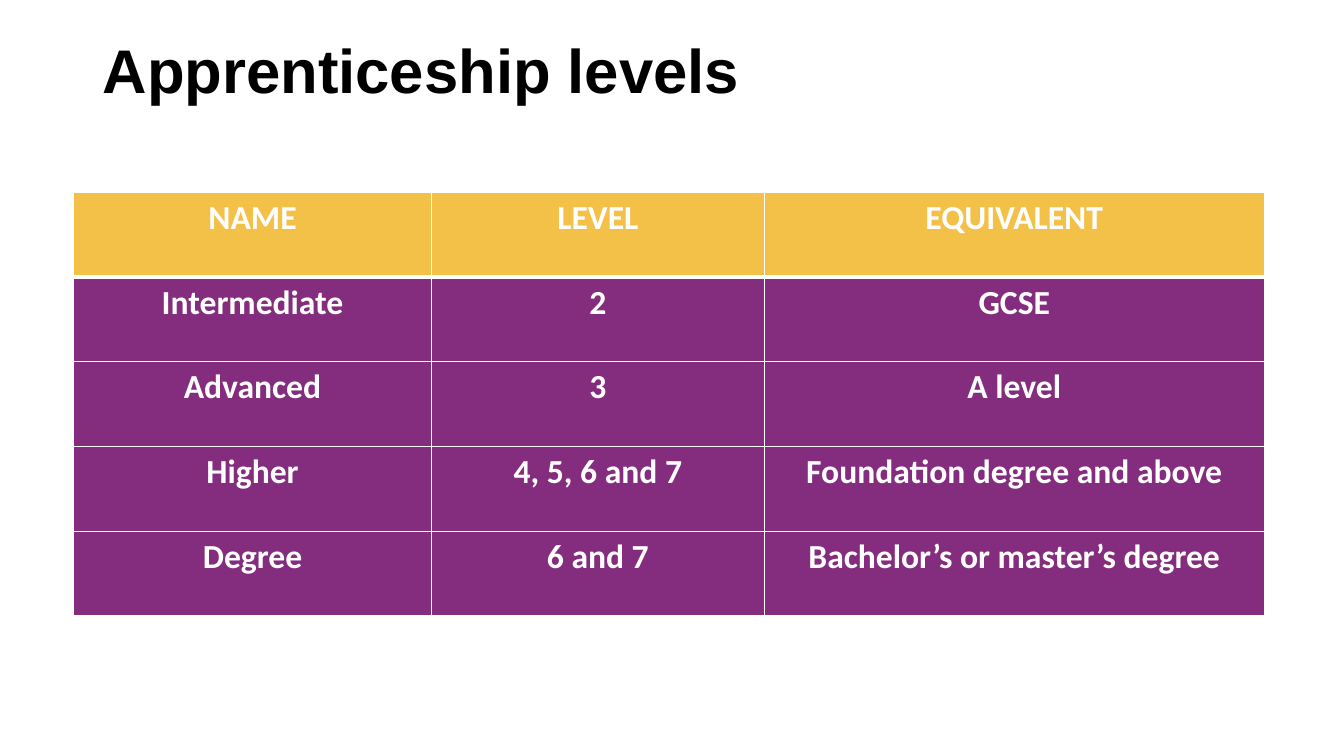
from lxml import etree
from pptx import Presentation
from pptx.dml.color import RGBColor
from pptx.enum.text import MSO_ANCHOR, PP_ALIGN
from pptx.oxml.ns import qn
from pptx.util import Inches, Pt

MIDDLE = MSO_ANCHOR.MIDDLE
LEFT, CENTER = PP_ALIGN.LEFT, PP_ALIGN.CENTER

TITLE = "Apprenticeship levels"
LEVELS = [
    ("NAME", "LEVEL", "EQUIVALENT"),
    ("Intermediate", "2", "GCSE"),
    ("Advanced", "3", "A level"),
    ("Higher", "4, 5, 6 and 7", "Foundation degree and above"),
    ("Degree", "6 and 7", "Bachelor’s or master’s degree"),
]
WIDTHS = (3.55, 3.3, 4.96)
ROW_H = 0.84
COLORS = {"text": "000000", "white": "FFFFFF", "head": "F4C148", "body": "842D7E"}


def write(frame, text, font, size, color, align):
    """Put one bold run into the first paragraph of a text frame."""
    para = frame.paragraphs[0]
    para.alignment = align
    run = para.add_run()
    run.text = text
    run.font.name = font
    run.font.size = Pt(size)
    run.font.bold = True
    run.font.color.rgb = RGBColor.from_string(COLORS[color])
    return para


def border(cell, side, width):
    """Draw a white line on one side of a cell."""
    props = cell._tc.get_or_add_tcPr()
    line = etree.SubElement(props, qn(f"a:ln{side}"), w=str(Pt(width)))
    fill = etree.SubElement(line, qn("a:solidFill"))
    etree.SubElement(fill, qn("a:srgbClr"), val=COLORS["white"])


def add_title(slide):
    """Add the heading of the slide."""
    box = slide.shapes.add_textbox(Inches(0.92), 0, Inches(11.5), Inches(1.45))
    frame = box.text_frame
    frame.word_wrap = True
    frame.vertical_anchor = MIDDLE
    para = write(frame, TITLE, "Arial", 44, "text", LEFT)
    para.line_spacing = 0.9


def add_levels(slide):
    """Add the table of levels."""
    count = len(LEVELS)
    table = slide.shapes.add_table(
        count, len(WIDTHS), Inches(0.73), Inches(1.91),
        Inches(sum(WIDTHS)), Inches(ROW_H * count)).table
    for col, width in zip(table.columns, WIDTHS):
        col.width = Inches(width)
    for r, row in enumerate(LEVELS):
        table.rows[r].height = Inches(ROW_H)
        thick = {0: "B", 1: "T"}.get(r)
        for c, text in enumerate(row):
            cell = table.cell(r, c)
            for side in "LRTB":
                border(cell, side, 3 if side == thick else 1)
            cell.fill.solid()
            shade = COLORS["body" if r else "head"]
            cell.fill.fore_color.rgb = RGBColor.from_string(shade)
            write(cell.text_frame, text, "Calibri", 24, "white", CENTER)


def main():
    """Build and save the slide."""
    deck = Presentation()
    deck.slide_width, deck.slide_height = Inches(13.33), Inches(7.5)
    slide = deck.slides.add_slide(deck.slide_layouts[6])
    add_title(slide)
    add_levels(slide)
    deck.save("out.pptx")


if __name__ == "__main__":
    main()
